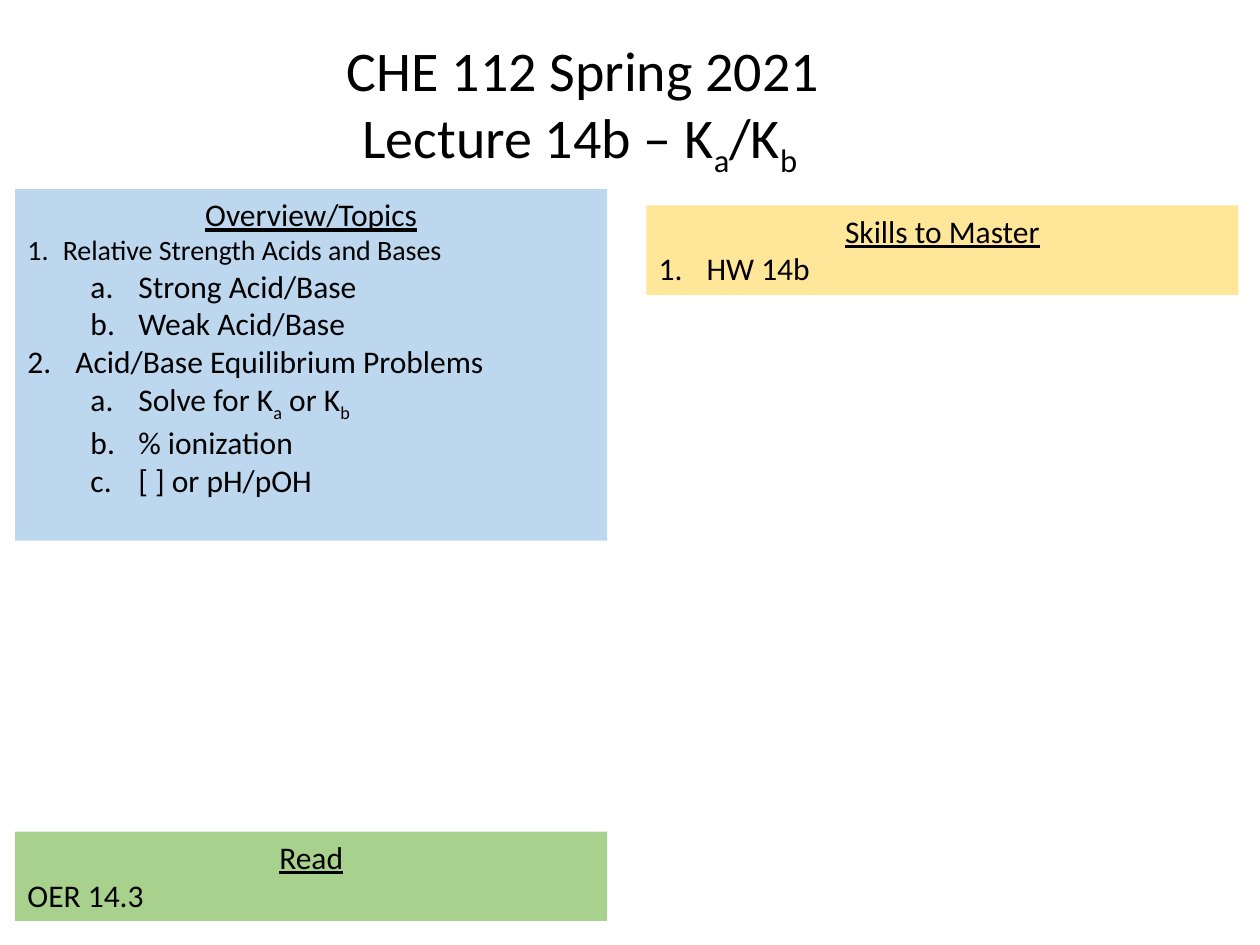
from lxml import etree
from pptx import Presentation, util as u
from pptx.dml.color import RGBColor
from pptx.enum import shapes, text
from pptx.oxml.ns import qn

BLACK = RGBColor(0x00, 0x00, 0x00)
BLUE = RGBColor(0xBD, 0xD7, 0xEE)
YELLOW = RGBColor(0xFF, 0xE6, 0x99)
GREEN = RGBColor(0xA9, 0xD1, 0x8E)
NUMBERS = ("arabicPeriod", "alphaLcPeriod")


def add_runs(p, line, size, underline=False):
    for i, part in enumerate(line.split("_")):
        if not part:
            continue
        r = p.add_run()
        r.text = part
        r.font.name = "Calibri"
        r.font.size = u.Pt(size)
        r.font.color.rgb = BLACK
        r.font.underline = underline
        if i % 2:
            r._r.get_or_add_rPr().set("baseline", "-25000")


def number(p, level, hang):
    p.level = level
    pPr = p._p.get_or_add_pPr()
    pPr.set("marL", str(u.Inches(level * 0.5 + hang)))
    pPr.set("indent", str(u.Inches(-hang)))
    etree.SubElement(pPr, qn("a:buFont"), typeface="+mj-lt")
    etree.SubElement(pPr, qn("a:buAutoNum"), type=NUMBERS[level])


prs = Presentation()
prs.slide_width, prs.slide_height = u.Inches(10), u.Inches(7.5)
s = prs.slides.add_slide(prs.slide_layouts[6])

LEFT, RIGHT, WIDTH = 0.12, 5.13, 4.7
panels = [
    (LEFT, 1.5, 2.79, BLUE, "Overview/Topics", [
        ("Relative Strength Acids and Bases", 0, 16, 0.28),
        ("Strong Acid/Base", 1, 18, 0.38),
        ("Weak Acid/Base", 1, 18, 0.38),
        ("Acid/Base Equilibrium Problems", 0, 18, 0.38),
        ("Solve for K_a_ or K_b", 1, 18, 0.38),
        ("% ionization", 1, 18, 0.38),
        ("[ ] or pH/pOH", 1, 18, 0.38),
    ]),
    (RIGHT, 1.63, 0.71, YELLOW, "Skills to Master", [("HW 14b", 0, 18, 0.38)]),
    (LEFT, 6.6, 0.71, GREEN, "Read", [("OER 14.3", 0, 18, 0)]),
]

for left, top, height, color, heading, items in panels:
    sp = s.shapes.add_shape(shapes.MSO_SHAPE.RECTANGLE, u.Inches(left), u.Inches(top),
                            u.Inches(WIDTH), u.Inches(height))
    sp.shadow.inherit = False
    sp.fill.solid()
    sp.fill.fore_color.rgb = color
    sp.line.fill.background()
    tf = sp.text_frame
    tf.word_wrap = True
    tf.vertical_anchor = text.MSO_ANCHOR.TOP
    p = tf.paragraphs[0]
    p.alignment = text.PP_ALIGN.CENTER
    add_runs(p, heading, 18, underline=True)
    for line, level, size, hang in items:
        p = tf.add_paragraph()
        p.alignment = text.PP_ALIGN.LEFT
        if hang:
            number(p, level, hang)
        add_runs(p, line, size)

sp = s.shapes.add_textbox(u.Inches(2.6), u.Inches(0.23), u.Inches(4.06), u.Inches(1.18))
tf = sp.text_frame
tf.word_wrap = False
for i, line in enumerate(["CHE 112 Spring 2021", "Lecture 14b – K_a_/K_b "]):
    p = tf.add_paragraph() if i else tf.paragraphs[0]
    p.alignment = text.PP_ALIGN.CENTER
    add_runs(p, line, 32)

prs.save("out.pptx")
